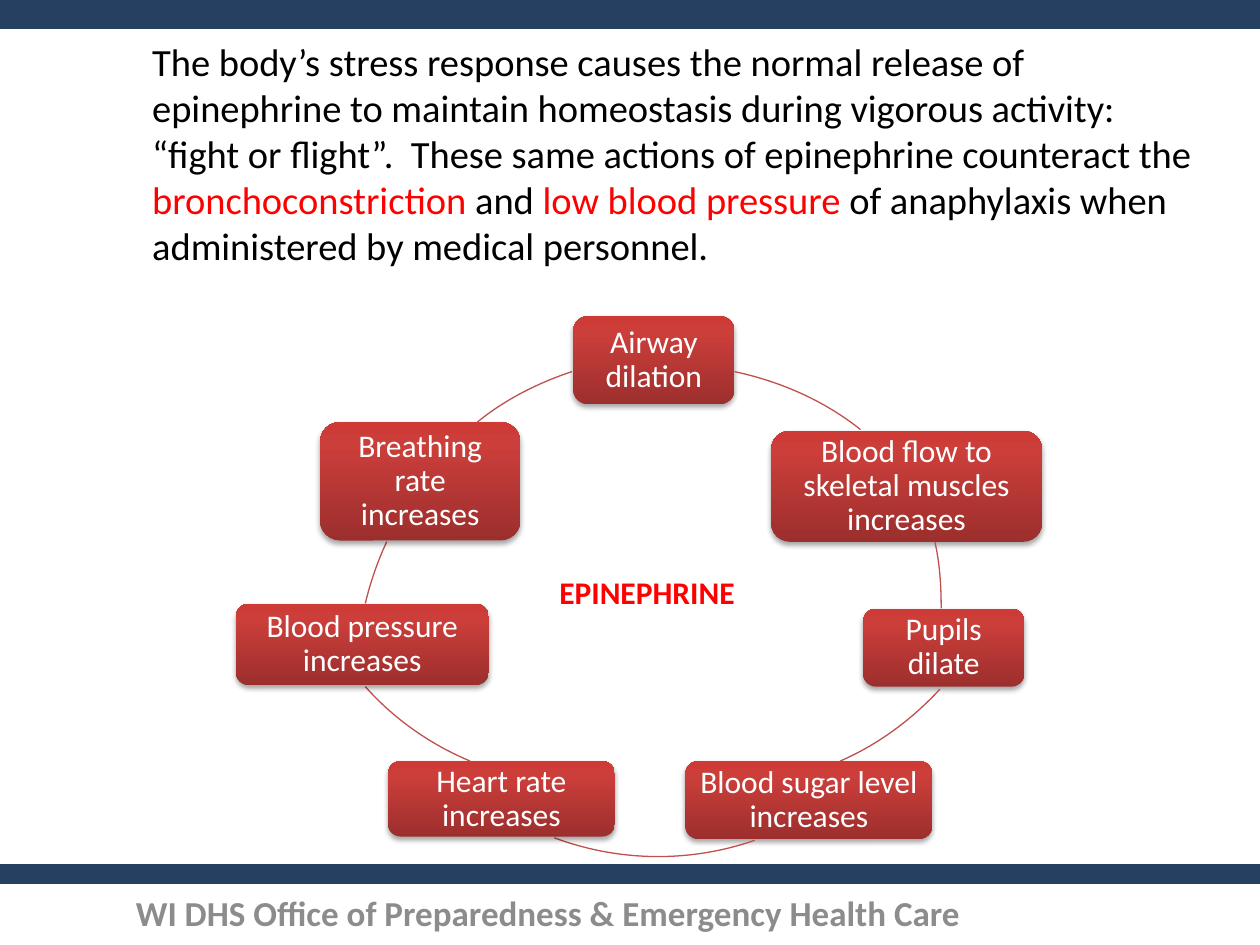
from lxml import etree
from pptx import Presentation
from pptx.dml.color import RGBColor
from pptx.enum.shapes import MSO_SHAPE
from pptx.enum.text import MSO_ANCHOR, PP_ALIGN
from pptx.oxml import parse_xml
from pptx.oxml.ns import nsdecls, qn
from pptx.util import Inches, Pt

COLORS = {
    "navy": "254061", "black": "000000", "red": "FF0000", "white": "FFFFFF",
    "gray": "8C8C8C", "arc": "C0504D",
}
EFFECT_GRADIENT = [(0, "9C2F2D"), (80, "CB3E3A"), (100, "CE3B37")]
RING_SIZE = 4.73

# text, left, top, width, height
EFFECTS = [
    ("Airway dilation", 4.55, 2.51, 1.28, 0.7),
    ("Blood flow to skeletal muscles increases", 6.12, 3.42, 2.15, 0.88),
    ("Pupils dilate", 6.85, 4.83, 1.28, 0.62),
    ("Blood sugar level increases", 5.44, 6.04, 1.96, 0.62),
    ("Heart rate increases", 3.08, 6.04, 1.8, 0.6),
    ("Blood pressure increases", 1.87, 4.79, 2.01, 0.65),
    ("Breathing rate increases", 2.54, 3.35, 1.59, 0.94),
]
# left and top of the ring, then start, two control points and end of its arc
ARCS = [
    (3, 2.91, [(5.83, 2.95), (6.2, 3.03), (6.54, 3.18), (6.83, 3.41)]),
    (2.74, 2.43, [(7.42, 4.3), (7.46, 4.48), (7.47, 4.65), (7.47, 4.83)]),
    (3.34, 1.51, [(7.46, 5.47), (7.24, 5.71), (6.97, 5.91), (6.67, 6.04)]),
    (2.86, 2.06, [(5.99, 6.67), (5.47, 6.85), (4.91, 6.84), (4.4, 6.65)]),
    (2.29, 1.49, [(3.73, 6.04), (3.42, 5.91), (3.13, 5.71), (2.9, 5.45)]),
    (2.85, 2.95, [(2.9, 4.79), (2.94, 4.62), (3, 4.45), (3.07, 4.3)]),
    (2.88, 2.85, [(3.79, 3.35), (4.01, 3.17), (4.27, 3.04), (4.54, 2.95)]),
]
INTRO = [
    ("The body’s stress response causes the normal release of epinephrine to "
     "maintain homeostasis during vigorous activity: “fight or flight”.  These "
     "same actions of epinephrine counteract the ", "black"),
    ("bronchoconstriction", "red"),
    (" and ", "black"),
    ("low blood pressure ", "red"),
    ("of anaphylaxis when administered by medical personnel.", "black"),
]


def rgb(name):
    return RGBColor.from_string(COLORS[name])


def write(frame, spans, size=18, bold=False, align=PP_ALIGN.LEFT,
          anchor=MSO_ANCHOR.TOP, spacing=None, inset=None):
    """Fill a text frame with one paragraph of (text, colour name) spans."""
    frame.word_wrap = True
    frame.vertical_anchor = anchor
    if inset is not None:
        frame.margin_left = frame.margin_right = Inches(inset)
        frame.margin_top = frame.margin_bottom = Inches(inset)
    para = frame.paragraphs[0]
    para.alignment = align
    if spacing is not None:
        para.line_spacing = spacing
    for text, color in spans:
        span = para.add_run()
        span.text = text
        span.font.name = "Calibri"
        span.font.size = Pt(size)
        span.font.bold = bold
        span.font.color.rgb = rgb(color)


def bend(shape, points):
    """Replace a freeform's outline with one cubic curve through its frame."""
    outline = next(shape.element.iter(qn("a:path")))
    outline.set("w", str(shape.width))
    outline.set("h", str(shape.height))
    for command in list(outline):
        outline.remove(command)
    move = etree.SubElement(outline, qn("a:moveTo"))
    curve = etree.SubElement(outline, qn("a:cubicBezTo"))
    for parent, (x, y) in zip([move, curve, curve, curve], points):
        etree.SubElement(parent, qn("a:pt"),
                         x=str(x - shape.left), y=str(y - shape.top))


def shade(shape):
    """Give a shape the upward red gradient and a soft shadow below it."""
    shape.fill.gradient()
    gradient = shape.element.spPr.find(qn("a:gradFill"))
    stops = "".join(
        f'<a:gs pos="{place * 1000}"><a:srgbClr val="{color}"/></a:gs>'
        for place, color in EFFECT_GRADIENT)
    gradient.getparent().replace(gradient, parse_xml(
        f'<a:gradFill {nsdecls("a")} rotWithShape="1"><a:gsLst>{stops}</a:gsLst>'
        '<a:lin ang="16200000" scaled="0"/></a:gradFill>'))
    effects = shape.element.spPr.find(qn("a:effectLst"))
    shadow = etree.SubElement(
        effects, qn("a:outerShdw"), blurRad=str(Pt(3.1)), dist=str(Pt(1.8)),
        dir="5400000", rotWithShape="0")
    color = etree.SubElement(shadow, qn("a:srgbClr"), val=COLORS["black"])
    etree.SubElement(color, qn("a:alpha"), val="35000")


class SlideBuilder:
    def __init__(self, slide):
        self.shapes = slide.shapes

    def shape(self, kind, left, top, width, height):
        shape = self.shapes.add_shape(
            kind, Inches(left), Inches(top), Inches(width), Inches(height))
        shape.shadow.inherit = False
        return shape

    def band(self, top, height):
        band = self.shape(MSO_SHAPE.RECTANGLE, 0, top, 10, height)
        band.fill.solid()
        band.fill.fore_color.rgb = rgb("navy")
        band.line.color.rgb = rgb("navy")
        band.line.width = Pt(2)

    def effect(self, text, left, top, width, height):
        card = self.shape(MSO_SHAPE.ROUNDED_RECTANGLE, left, top, width, height)
        shade(card)
        card.line.fill.background()
        write(card.text_frame, [(text, "white")], align=PP_ALIGN.CENTER,
              anchor=MSO_ANCHOR.MIDDLE, spacing=0.9, inset=0.07)

    def arc(self, left, top, controls):
        points = [(Inches(x), Inches(y)) for x, y in controls]
        builder = self.shapes.build_freeform(*points[0])
        builder.add_line_segments(points[1:], close=False)
        arc = builder.convert_to_shape()
        arc.left, arc.top = Inches(left), Inches(top)
        arc.width = arc.height = Inches(RING_SIZE)
        bend(arc, points)
        arc.shadow.inherit = False
        arc.fill.background()
        arc.line.color.rgb = rgb("arc")
        arc.line.width = Pt(0.75)

    def text(self, spans, left, top, width, height, **style):
        box = self.shapes.add_textbox(
            Inches(left), Inches(top), Inches(width), Inches(height))
        write(box.text_frame, spans, **style)


def main():
    deck = Presentation()
    deck.slide_width = Inches(10)
    deck.slide_height = Inches(7.5)
    blank_layout = deck.slide_layouts[6]
    page = SlideBuilder(deck.slides.add_slide(blank_layout))

    page.band(0, 0.22)
    page.band(6.87, 0.13)
    page.text(INTRO, 1.11, 0.25, 8.47, 1.95, size=22)
    for effect, arc in zip(EFFECTS, ARCS):
        page.effect(*effect)
        page.arc(*arc)
    page.text([("EPINEPHRINE", "red")], 4.34, 4.5, 1.72, 0.4, bold=True)
    page.text([("WI DHS Office of Preparedness & Emergency Health Care", "gray")],
              0.46, 7.1, 7.78, 0.29, size=20, bold=True,
              align=PP_ALIGN.CENTER, anchor=MSO_ANCHOR.MIDDLE)
    deck.save("out.pptx")


if __name__ == "__main__":
    main()
